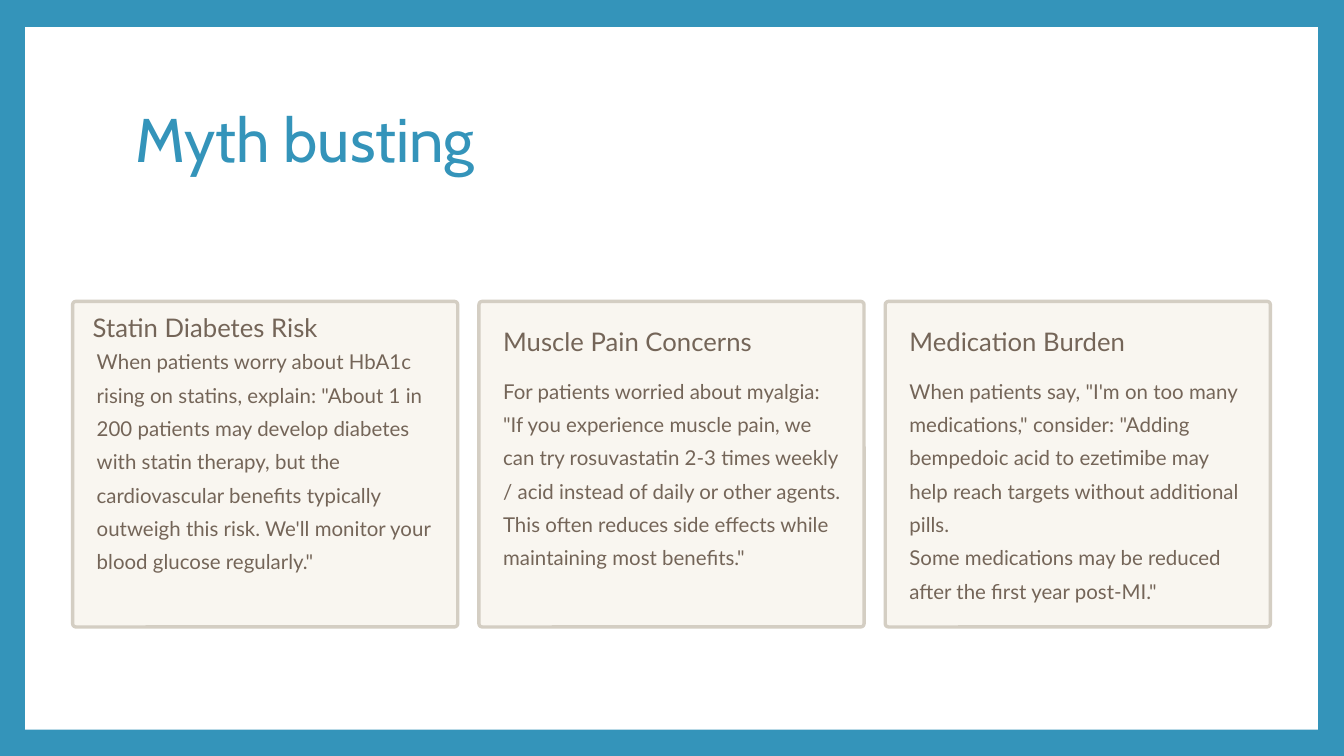
import pptx
import pptx.util
import pptx.dml.color
import pptx.enum.shapes
import pptx.enum.text

Inches, Pt = pptx.util.Inches, pptx.util.Pt
RGBColor = pptx.dml.color.RGBColor
SHAPE = pptx.enum.shapes.MSO_SHAPE
ANCHOR = pptx.enum.text.MSO_ANCHOR

BLUE = RGBColor(0x34, 0x94, 0xBA)
WHITE = RGBColor(0xFF, 0xFF, 0xFF)
CREAM = RGBColor(0xF9, 0xF6, 0xF0)
SAND = RGBColor(0xD4, 0xCE, 0xC3)
BROWN = RGBColor(0x74, 0x65, 0x58)

prs = pptx.Presentation()
prs.slide_width, prs.slide_height = Inches(13.33), Inches(7.5)
s = prs.slides.add_slide(prs.slide_layouts[6])


def add_text(text, x, y, w, h, *, size, spacing, font="Lato", color=BROWN,
             wrap=True, inset=(0, 0), anchor=ANCHOR.TOP):
    """Add a text box with one paragraph per line of text."""
    tf = s.shapes.add_textbox(Inches(x), Inches(y), Inches(w), Inches(h)).text_frame
    tf.word_wrap = wrap
    tf.vertical_anchor = anchor
    tf.margin_left = tf.margin_right = Inches(inset[0])
    tf.margin_top = tf.margin_bottom = Inches(inset[1])
    for i, line in enumerate(text.split("\n")):
        p = tf.paragraphs[0] if i == 0 else tf.add_paragraph()
        p.line_spacing = spacing
        r = p.add_run()
        r.text = line
        r.font.name, r.font.size = font, Pt(size)
        r.font.color.rgb = color


def add_box(kind, x, y, w, h, fill):
    """Add a flat filled shape without an outline."""
    sp = s.shapes.add_shape(kind, Inches(x), Inches(y), Inches(w), Inches(h))
    sp.shadow.inherit = False
    sp.fill.solid()
    sp.fill.fore_color.rgb = fill
    sp.line.fill.background()
    return sp


# Blue frame around a white panel
s.background.fill.solid()
s.background.fill.fore_color.rgb = BLUE
add_box(SHAPE.RECTANGLE, 0.25, 0.27, 12.82, 6.97, WHITE)

# Title
add_text("Myth busting", 1.25, 0.67, 10.8, 1.48, size=44, spacing=0.9, font="Cabin",
         color=BLUE, inset=(0.1, 0.05), anchor=ANCHOR.MIDDLE)

# Cards: heading, heading x and y, body, body x and y
cards = [
    ("Statin Diabetes Risk", 0.92, 3.08,
     "When patients worry about HbA1c rising on statins, explain: \"About 1 in 200 "
     "patients may develop diabetes with statin therapy, but the cardiovascular "
     "benefits typically outweigh this risk. We'll monitor your blood glucose "
     "regularly.\"", 0.96, 3.38),
    ("Muscle Pain Concerns", 4.99, 3.22,
     "For patients worried about myalgia:\n"
     "\"If you experience muscle pain, we can try rosuvastatin 2-3 times weekly / acid "
     "instead of daily or other agents. This often reduces side effects while "
     "maintaining most benefits.\"", 4.99, 3.67),
    ("Medication Burden", 9.02, 3.22,
     "When patients say, \"I'm on too many medications,\" consider: \"Adding bempedoic "
     "acid to ezetimibe may help reach targets without additional pills.\n"
     "Some medications may be reduced after the first year post-MI.\"", 9.02, 3.67),
]
CARD_LEFT, CARD_STEP = 0.72, 4.03

for i, (heading, hx, hy, body, bx, by) in enumerate(cards):
    sp = add_box(SHAPE.ROUNDED_RECTANGLE, CARD_LEFT + i * CARD_STEP, 2.99, 3.82, 3.23, CREAM)
    sp.adjustments[0] = 0.01
    sp.line.color.rgb = SAND
    sp.line.width = Pt(2.4)
    add_text(heading, hx, hy, 2.6, 0.32, size=18.3, spacing=Pt(22.9), wrap=False)
    add_text(body, bx, by, 3.36, 2.5, size=14.6, spacing=Pt(23.8))

prs.save("out.pptx")
